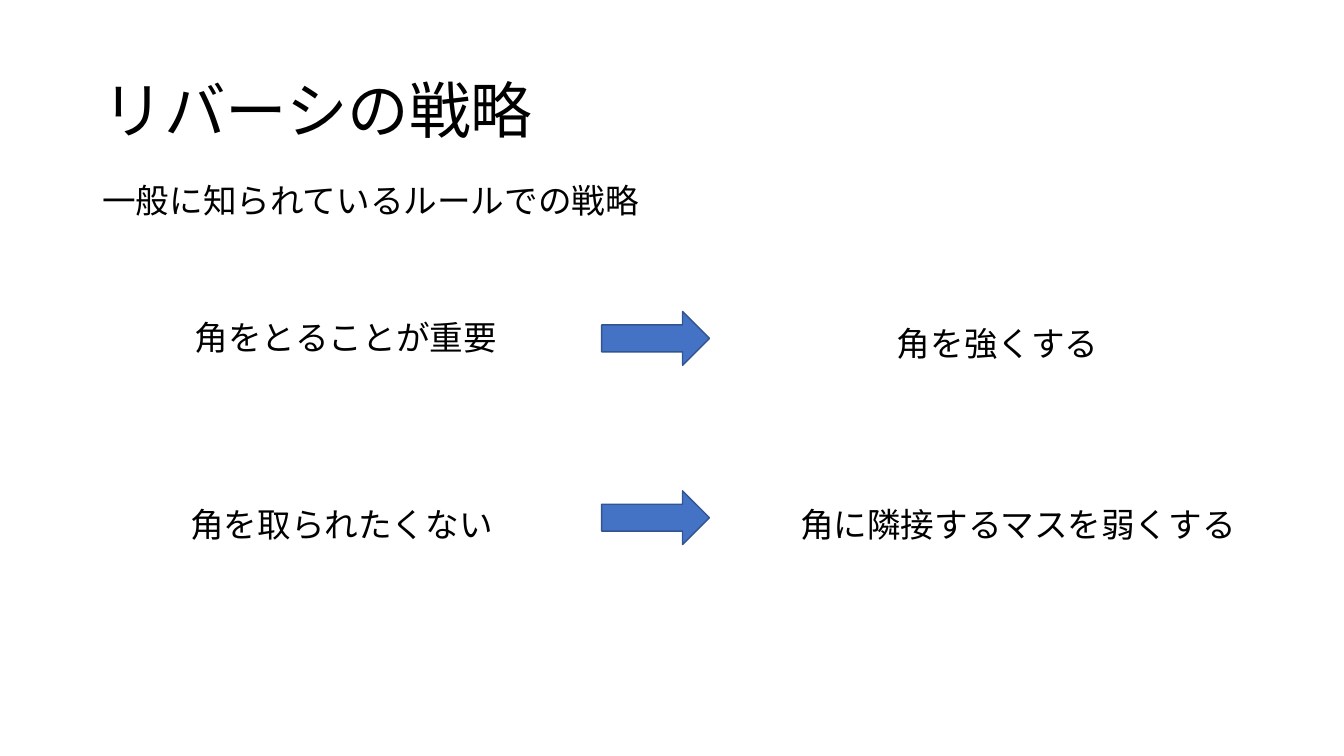
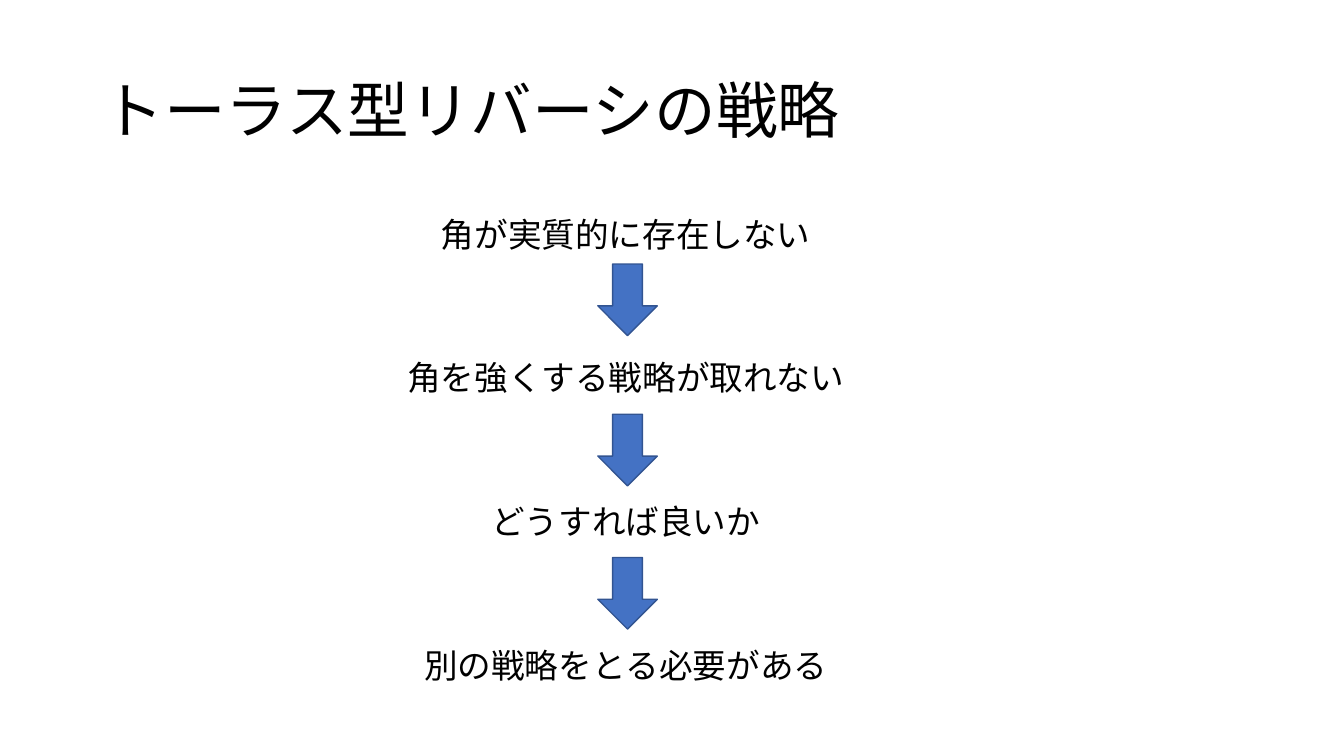
from pptx import Presentation
from pptx.dml.color import RGBColor
from pptx.enum.shapes import MSO_SHAPE
from pptx.enum.text import MSO_ANCHOR, MSO_AUTO_SIZE, PP_ALIGN
from pptx.oxml.ns import qn
from pptx.util import Pt
from lxml import etree

RIGHT, DOWN = MSO_SHAPE.RIGHT_ARROW, MSO_SHAPE.DOWN_ARROW
LEFT, CENTER = PP_ALIGN.LEFT, PP_ALIGN.CENTER
MIDDLE, TOP = MSO_ANCHOR.MIDDLE, MSO_ANCHOR.TOP
FIXED = MSO_AUTO_SIZE.NONE

COLORS = {"text": "000000", "fill": "4472C4", "line": "325491"}
FONT = "Noto Sans CJK JP"
SIZE = 24
PAD = 18  # side margins of a text box, with a little slack


def write(shape, text, size, align, anchor):
    frame = shape.text_frame
    frame.word_wrap = True
    frame.auto_size = FIXED
    frame.vertical_anchor = anchor
    para = frame.paragraphs[0]
    para.alignment = align
    run = para.add_run()
    run.text = text
    run.font.size = Pt(size)
    run.font.name = FONT
    run.font.color.rgb = RGBColor.from_string(COLORS["text"])
    # Japanese glyphs take the East Asian font
    east = etree.SubElement(run.font._element, qn("a:ea"))
    east.set("typeface", FONT)
    return para


def arrow(slide, kind, left, top, width, height):
    shape = slide.shapes.add_shape(kind, Pt(left), Pt(top), Pt(width), Pt(height))
    shape.shadow.inherit = False
    shape.fill.solid()
    shape.fill.fore_color.rgb = RGBColor.from_string(COLORS["fill"])
    shape.line.color.rgb = RGBColor.from_string(COLORS["line"])
    shape.line.width = Pt(1)


# Page and shared title place
prs = Presentation()
prs.slide_width, prs.slide_height = Pt(960), Pt(540)
layout = prs.slide_layouts[5]
head = layout.placeholders[0]
head.left, head.top, head.width, head.height = Pt(66), Pt(28.8), Pt(828), Pt(104.4)

# Slides with their titles
slides = []
for title in ("リバーシの戦略", "トーラス型リバーシの戦略"):
    slide = prs.slides.add_slide(layout)
    para = write(slide.shapes.title, title, 44, LEFT, MIDDLE)
    para.line_spacing = 0.9
    slides.append(slide)
rules, torus = slides

# Slide 1: strategy under the usual rules
notes = (
    ("一般に知られているルールでの戦略", 66, 125.3),
    ("角をとることが重要", 131.8, 222.5),
    ("角を強くする", 633.6, 226.8),
    ("角を取られたくない", 128.9, 356.4),
    ("角に隣接するマスを弱くする", 564.5, 356.4),
)
for text, left, top in notes:
    width = len(text) * SIZE + PAD
    box = rules.shapes.add_textbox(Pt(left), Pt(top), Pt(width), Pt(36))
    write(box, text, SIZE, LEFT, TOP)
for top in (222.5, 350.6):
    arrow(rules, RIGHT, 429.8, top, 77, 38.4)

# Slide 2: chain of steps around one axis
AXIS, START, STEP, WIDE = 447, 149, 102.7, 330
steps = (
    "角が実質的に存在しない",
    "角を強くする戦略が取れない",
    "どうすれば良いか",
    "別の戦略をとる必要がある",
)
for i, text in enumerate(steps):
    top = START + i * STEP
    box = torus.shapes.add_textbox(Pt(AXIS - WIDE / 2), Pt(top), Pt(WIDE), Pt(36))
    write(box, text, SIZE, CENTER, TOP)
for top in (188.6, 295.9, 398.2):
    arrow(torus, DOWN, 427, top, 42.5, 51.1)

prs.save("out.pptx")
